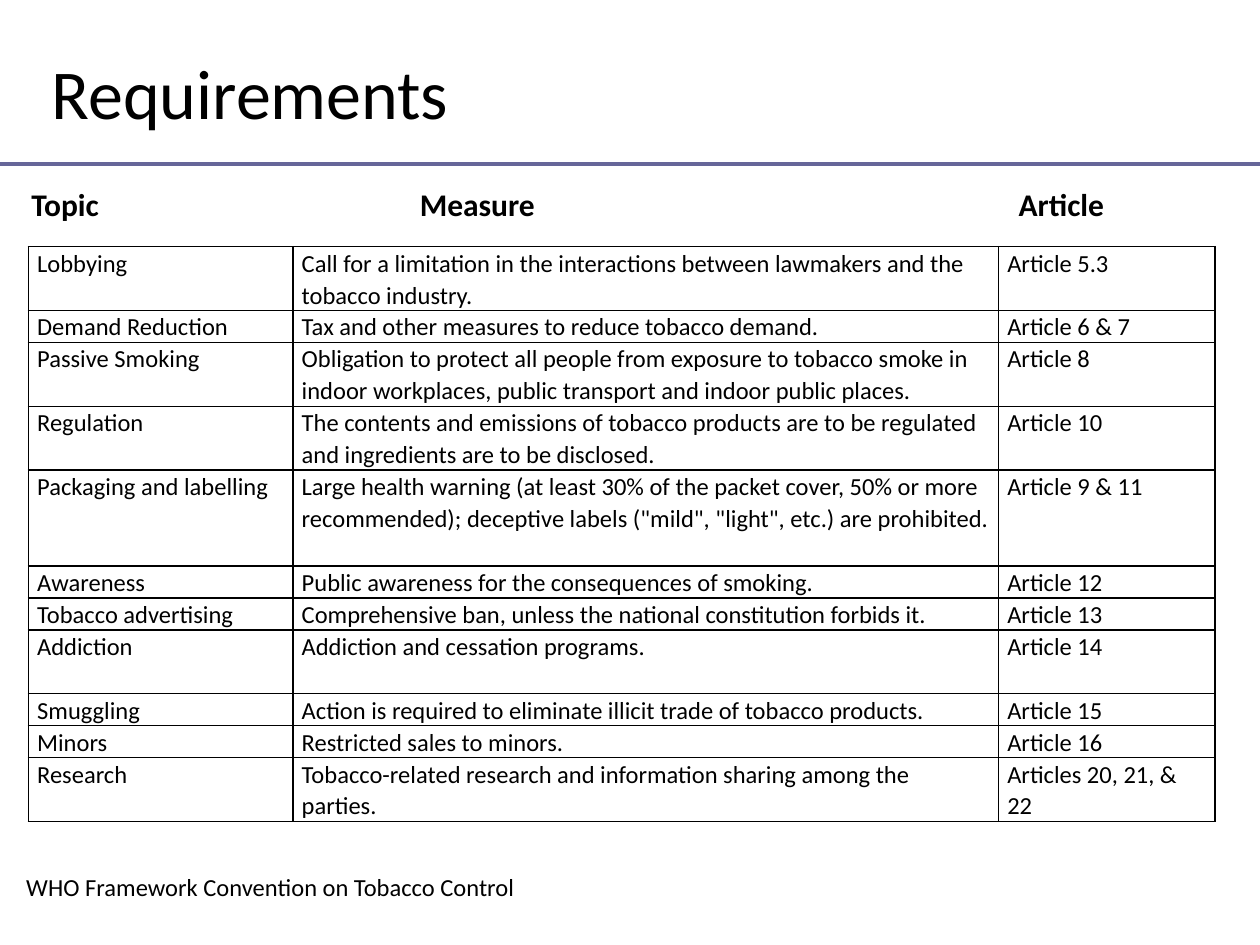
"""Build the slide that lists the requirements of the tobacco control convention."""
from lxml import etree
from pptx import Presentation
from pptx.dml.color import RGBColor
from pptx.enum.shapes import MSO_CONNECTOR
from pptx.enum.text import MSO_ANCHOR, PP_ALIGN
from pptx.oxml.ns import qn
from pptx.util import Pt

BLACK = RGBColor(0x00, 0x00, 0x00)
SLATE = RGBColor(0x66, 0x66, 0x99)
LEFT = PP_ALIGN.LEFT
MIDDLE = MSO_ANCHOR.MIDDLE
STRAIGHT = MSO_CONNECTOR.STRAIGHT
FONT = "Calibri"
LINE = 18.25
WIDTHS = (151.2, 403.2, 123.84)
TABS = (222, 564.25)
ROWS = (
    (2, "Lobbying", "Call for a limitation in the interactions between lawmakers "
     "and the tobacco industry.", "Article 5.3"),
    (1, "Demand Reduction", "Tax and other measures to reduce tobacco demand.",
     "Article 6 & 7"),
    (2, "Passive Smoking", "Obligation to protect all people from exposure to tobacco "
     "smoke in indoor workplaces, public transport and indoor public places.",
     "Article 8"),
    (2, "Regulation", "The contents and emissions of tobacco products are to be "
     "regulated and ingredients are to be disclosed.", "Article 10"),
    (3, "Packaging and labelling", "Large health warning (at least 30% of the packet "
     "cover, 50% or more recommended); deceptive labels (\"mild\", \"light\", etc.) "
     "are prohibited.", "Article 9 & 11"),
    (1, "Awareness", "Public awareness for the consequences of smoking.", "Article 12"),
    (1, "Tobacco advertising", "Comprehensive ban, unless the national constitution "
     "forbids it.", "Article 13"),
    (2, "Addiction", "Addiction and cessation programs.", "Article 14"),
    (1, "Smuggling", "Action is required to eliminate illicit trade of tobacco "
     "products.", "Article 15"),
    (1, "Minors", "Restricted sales to minors.", "Article 16"),
    (2, "Research", "Tobacco-related research and information sharing among the "
     "parties.", "Articles 20, 21, & 22"),
)


def write(frame, text, size=14, bold=False, space=None, tabs=()):
    """Write one formatted paragraph into a text frame."""
    frame.word_wrap = True
    para = frame.paragraphs[0]
    para.alignment = LEFT
    if space:
        para.line_spacing = space
    if tabs:
        stops = etree.SubElement(para._p.get_or_add_pPr(), qn("a:tabLst"))
        for stop in tabs:
            etree.SubElement(stops, qn("a:tab"), pos=str(Pt(stop)), algn="l")
    run = para.add_run()
    run.text = text
    run.font.name = FONT
    run.font.size = Pt(size)
    run.font.bold = bold
    run.font.color.rgb = BLACK


def add_title(slide, text):
    """Place and fill the title."""
    title = slide.shapes.title
    title.left, title.top = Pt(22.32), Pt(21.6)
    title.width, title.height = Pt(648), Pt(61.2)
    title.text_frame.vertical_anchor = MIDDLE
    write(title.text_frame, text, size=40)


def add_rule(slide, top, width):
    """Draw a rule across the slide."""
    rule = slide.shapes.add_connector(STRAIGHT, 0, Pt(top), width, Pt(top))
    rule.line.color.rgb = SLATE
    rule.line.width = Pt(2)
    etree.SubElement(rule._element.spPr, qn("a:effectLst"))


def add_label(slide, text, left, top, width, height, **style):
    """Add a text box."""
    box = slide.shapes.add_textbox(Pt(left), Pt(top), Pt(width), Pt(height))
    write(box.text_frame, text, **style)


def frame_cell(cell):
    """Give a cell thin black borders and no fill."""
    props = cell._tc.get_or_add_tcPr()
    for side in ("lnL", "lnR", "lnT", "lnB"):
        edge = etree.SubElement(props, qn("a:" + side), w=str(Pt(1)))
        fill = etree.SubElement(edge, qn("a:solidFill"))
        etree.SubElement(fill, qn("a:srgbClr"), val=str(BLACK))
    cell.fill.background()


def add_grid(slide, left, top):
    """Add the table, each row as tall as its count of lines."""
    tall = LINE * sum(row[0] for row in ROWS)
    table = slide.shapes.add_table(len(ROWS), len(WIDTHS), Pt(left), Pt(top),
                                   Pt(sum(WIDTHS)), Pt(tall)).table
    table.first_row = table.horz_banding = False
    for col, width in zip(table.columns, WIDTHS):
        col.width = Pt(width)
    for row, (lines, *texts) in zip(table.rows, ROWS):
        row.height = Pt(LINE * lines)
        for cell, text in zip(row.cells, texts):
            cell.margin_left = cell.margin_right = Pt(5.04)
            cell.margin_top = cell.margin_bottom = 0
            write(cell.text_frame, text, space=1.07)
            frame_cell(cell)


def main():
    """Build and save the slide."""
    deck = Presentation()
    deck.slide_width, deck.slide_height = Pt(720), Pt(540)
    slide = deck.slides.add_slide(deck.slide_layouts[5])
    add_rule(slide, 93.6, deck.slide_width)
    add_title(slide, "Requirements")
    add_grid(slide, 16.2, 141)
    add_label(slide, "Topic\tMeasure\tArticle", 10.8, 102.24, 671.76, 28.8,
              size=18, bold=True, tabs=TABS)
    add_label(slide, "WHO Framework Convention on Tobacco Control",
              7.92, 494.64, 578.16, 24.48)
    deck.save("out.pptx")


if __name__ == "__main__":
    main()
